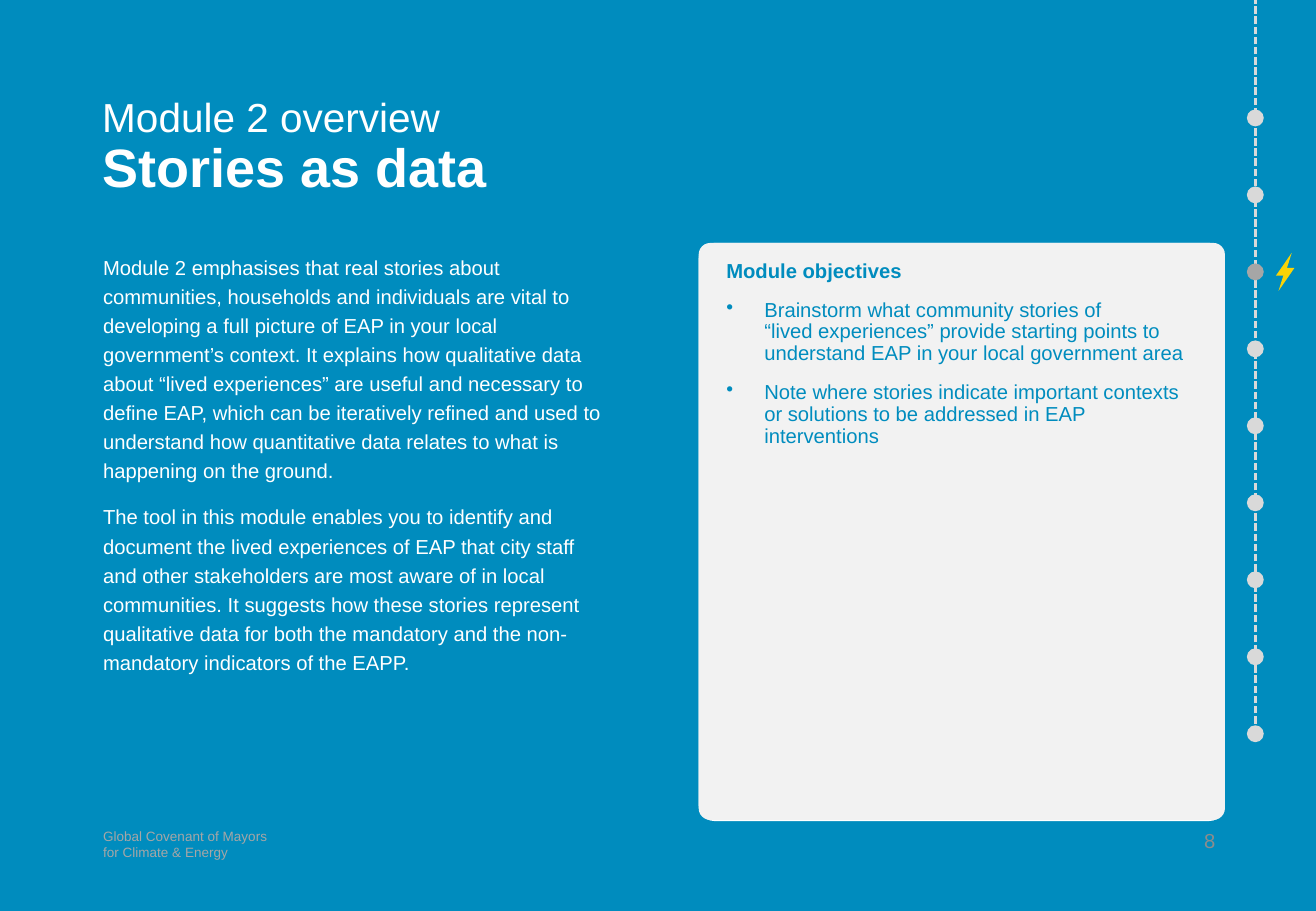
import pptx
import pptx.util
import pptx.dml.color
import pptx.enum.dml
import pptx.enum.shapes
import pptx.enum.text
import pptx.oxml
import pptx.oxml.ns

Pt = pptx.util.Pt
SHAPE = pptx.enum.shapes.MSO_SHAPE
ALIGN = pptx.enum.text.PP_ALIGN

COLORS = {
    "blue": "008CBE", "white": "FFFFFF", "panel": "F2F2F2", "dot": "D9D9D9",
    "current": "A6A6A6", "footer": "A6A6A6", "number": "8C8C8C", "bolt": "FAD307",
}

TITLE = "Module 2 overview"
SUBTITLE = "Stories as data"
BODY = [
    "Module 2 emphasises that real stories about communities, households and individuals "
    "are vital to developing a full picture of EAP in your local government’s context. "
    "It explains how qualitative data about “lived experiences” are useful and necessary "
    "to define EAP, which can be iteratively refined and used to understand how "
    "quantitative data relates to what is happening on the ground.",
    "The tool in this module enables you to identify and document the lived experiences "
    "of EAP that city staff and other stakeholders are most aware of in local "
    "communities. It suggests how these stories represent qualitative data for both the "
    "mandatory and the non-mandatory indicators of the EAPP.",
]
OBJECTIVES_HEADING = "Module objectives"
OBJECTIVES = [
    "Brainstorm what community stories of \n“lived experiences” provide starting points "
    "to understand EAP in your local government area",
    "Note where stories indicate important contexts or solutions to be addressed in EAP "
    "interventions",
]
FOOTER = "Global Covenant of Mayors\nfor Climate & Energy"
PAGE = "8"

SLIDE_W, SLIDE_H = 779.76, 540
PANEL = (414, 144, 311.8)
TRACK_X, FIRST_DOT, DOT_STEP, DOT_COUNT, DOT_SIZE = 743.8, 69.9, 45.63, 9, 10
CURRENT_DOT = 2
BOLT_CENTER_X = 761.5
BOLT_HALF = [(-0.5, 2.3), (-5.5, 2.3), (3.9, -11.3), (0.3, 0.2)]


def rgb(name):
    return pptx.dml.color.RGBColor.from_string(COLORS[name])


def add_runs(p, text, size=12, color="white", bold=False):
    """Append text to a paragraph, turning each newline into a line break."""
    for i, line in enumerate(text.split("\n")):
        if i:
            p.add_line_break()
        r = p.add_run()
        r.text = line
        r.font.name = "Arial"
        r.font.size = Pt(size)
        r.font.bold = bold
        r.font.color.rgb = rgb(color)


def write(tf, text, spacing=1.0, align=ALIGN.LEFT, bullet=False, **font):
    """Fill the empty first paragraph, or add a spaced one after it."""
    p = tf.paragraphs[0]
    if p.runs:
        p = tf.add_paragraph()
        p.space_before = Pt(10)
    p.line_spacing = spacing
    p.alignment = align
    if bullet:
        pPr = p._p.get_or_add_pPr()
        pPr.set("marL", str(Pt(22.5)))
        pPr.set("indent", str(-Pt(22.5)))
        bu = pptx.oxml.parse_xml(f'<a:buChar {pptx.oxml.ns.nsdecls("a")} char="•"/>')
        pPr.append(bu)
    add_runs(p, text, **font)
    return p


def add_box(s, x, y, w, h):
    tf = s.shapes.add_textbox(Pt(x), Pt(y), Pt(w), Pt(h)).text_frame
    tf.word_wrap = True
    return tf


def paint(sp, color):
    sp.shadow.inherit = False
    sp.fill.solid()
    sp.fill.fore_color.rgb = rgb(color)
    sp.line.fill.background()


def add_filled(s, kind, x, y, w, h, color):
    sp = s.shapes.add_shape(kind, Pt(x), Pt(y), Pt(w), Pt(h))
    paint(sp, color)
    return sp


def add_panel(s, height, corner, color):
    x, y, w = PANEL
    sp = add_filled(s, SHAPE.ROUNDED_RECTANGLE, x, y, w, height, color)
    sp.adjustments[0] = corner
    return sp


def add_track(s):
    last = FIRST_DOT + DOT_STEP * (DOT_COUNT - 1)
    line = s.shapes.add_connector(pptx.enum.shapes.MSO_CONNECTOR.STRAIGHT,
                                  Pt(TRACK_X), Pt(last), Pt(TRACK_X), Pt(0))
    line.line.color.rgb = rgb("dot")
    line.line.width = Pt(1.5)
    line.line.dash_style = pptx.enum.dml.MSO_LINE.SQUARE_DOT
    line._element.spPr.append(
        pptx.oxml.parse_xml(f'<a:effectLst {pptx.oxml.ns.nsdecls("a")}/>'))
    for i in range(DOT_COUNT):
        add_filled(s, SHAPE.OVAL, TRACK_X - DOT_SIZE / 2,
                   FIRST_DOT + i * DOT_STEP - DOT_SIZE / 2, DOT_SIZE, DOT_SIZE,
                   "current" if i == CURRENT_DOT else "dot")


def add_bolt(s):
    """Draw the upper half of the bolt and its point reflection."""
    center_y = FIRST_DOT + CURRENT_DOT * DOT_STEP
    for sign in (1, -1):
        pts = [(Pt(BOLT_CENTER_X + sign * dx), Pt(center_y + sign * dy))
               for dx, dy in BOLT_HALF]
        fb = s.shapes.build_freeform(*pts[0])
        fb.add_line_segments(pts[1:], close=True)
        paint(fb.convert_to_shape(), "bolt")


def main():
    prs = pptx.Presentation()
    prs.slide_width, prs.slide_height = Pt(SLIDE_W), Pt(SLIDE_H)
    s = prs.slides.add_slide(prs.slide_layouts[6])
    s.background.fill.solid()
    s.background.fill.fore_color.rgb = rgb("blue")

    write(add_box(s, 54, 487.4, 131.8, 28.8), FOOTER, size=8, color="footer")
    add_track(s)
    add_bolt(s)

    body = add_box(s, 54, 144.7, 311.8, 342.7)
    for text in BODY:
        write(body, text, spacing=1.2)

    write(add_box(s, 689.8, 487.4, 37.4, 28.8), PAGE, align=ALIGN.RIGHT, color="number")

    p = write(add_box(s, 53.5, 54, 360.7, 77.8), TITLE, spacing=0.9, size=24)
    p.add_line_break()
    add_runs(p, SUBTITLE, size=32, bold=True)

    add_panel(s, 342.7, 0.03, "white")
    tf = add_panel(s, 342, 0.022, "panel").text_frame
    tf.word_wrap = True
    tf.vertical_anchor = pptx.enum.text.MSO_ANCHOR.TOP
    tf.margin_left = tf.margin_right = Pt(14.4)
    tf.margin_top = tf.margin_bottom = Pt(8.64)
    write(tf, OBJECTIVES_HEADING, spacing=0.9, color="blue", bold=True)
    for text in OBJECTIVES:
        write(tf, text, spacing=0.9, bullet=True, color="blue")

    prs.save("out.pptx")


if __name__ == "__main__":
    main()
